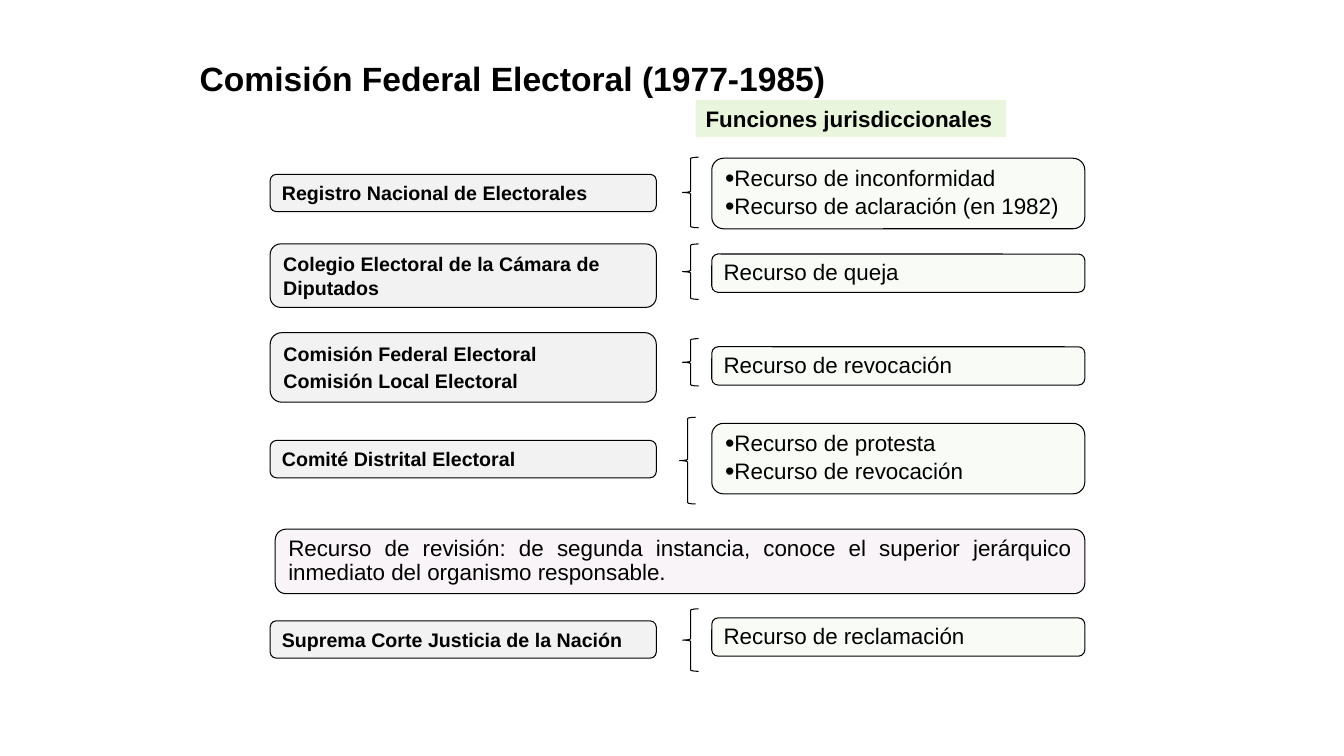
"""Build a slide pairing electoral bodies with their legal remedies."""
import pptx
import pptx.util
import pptx.dml.color
import pptx.enum.shapes
import pptx.enum.text
import pptx.oxml.ns
import lxml.etree
from dataclasses import dataclass

TITLE = "Comisión Federal Electoral (1977-1985)"
HEAD = "Funciones jurisdiccionales"
REVIEW = ("Recurso de revisión: de segunda instancia, conoce el superior "
          "jerárquico inmediato del organismo responsable.")

# Each part holds its lines, top and height; the brace holds left, top, height.
ROWS = [
    ((["Registro Nacional de Electorales"], 1.73, 0.37),
     (["Recurso de inconformidad", "Recurso de aclaración (en 1982)"], 1.57, 0.7),
     (6.77, 1.56, 0.7)),
    ((["Colegio Electoral de la Cámara de Diputados"], 2.42, 0.63),
     (["Recurso de queja"], 2.52, 0.38),
     (6.77, 2.42, 0.55)),
    ((["Comisión Federal Electoral", "Comisión Local Electoral"], 3.3, 0.69),
     (["Recurso de revocación"], 3.44, 0.38),
     (6.77, 3.36, 0.47)),
    ((["Comité Distrital Electoral"], 4.37, 0.37),
     (["Recurso de protesta", "Recurso de revocación"], 4.2, 0.7),
     (6.74, 4.14, 0.86)),
    ((["Suprema Corte Justicia de la Nación"], 6.16, 0.37),
     (["Recurso de reclamación"], 6.13, 0.38),
     (6.77, 6.04, 0.62)),
]
BODY_X, BODY_W = 2.68, 3.83
CASE_X, CASE_W = 7.06, 3.7
BRACE_W = 0.16
HANG = 0.09


@dataclass(frozen=True)
class Theme:
    """Colours, font and type sizes."""
    font: str = "Arial"
    ink: str = "000000"
    gray: str = "BFBFBF"
    green: str = "92D050"
    plum: str = "993366"
    title: int = 24
    case: int = 16
    body: int = 14
    lead: float = 16.8
    rule: float = 0.75


LOOK = Theme()
KIND = pptx.enum.shapes.MSO_SHAPE
ALIGN = pptx.enum.text.PP_ALIGN
ANCHOR = pptx.enum.text.MSO_ANCHOR
Pt = pptx.util.Pt


def color(code):
    """Turn a hex code into a colour."""
    return pptx.dml.color.RGBColor.from_string(code)


def add(parent, tag, **attrs):
    """Append a drawing element."""
    return lxml.etree.SubElement(parent, pptx.oxml.ns.qn(tag), **attrs)


def draw(slide, kind, box, fill=None, alpha=100, line=True):
    """Add a preset shape with a tinted fill and a thin line."""
    shape = slide.shapes.add_shape(kind, *map(pptx.util.Inches, box))
    shape.shadow.inherit = False
    if fill:
        shape.fill.solid()
        shape.fill.fore_color.rgb = color(fill)
        tint = shape.fill._xPr.find(".//" + pptx.oxml.ns.qn("a:srgbClr"))
        add(tint, "a:alpha", val=str(alpha * 1000))
    else:
        shape.fill.background()
    if line:
        shape.line.color.rgb = color(LOOK.ink)
        shape.line.width = Pt(LOOK.rule)
    else:
        shape.line.fill.background()
    return shape


def write(shape, lines, size, bold=False, align=ALIGN.LEFT,
          anchor=ANCHOR.MIDDLE, lead=None, wrap=True):
    """Fill a shape with formatted paragraphs."""
    frame = shape.text_frame
    frame.text = "\n".join(lines)
    frame.word_wrap = wrap
    frame.auto_size = pptx.enum.text.MSO_AUTO_SIZE.NONE
    frame.vertical_anchor = anchor
    for i, para in enumerate(frame.paragraphs):
        para.alignment = align
        para.space_before = Pt(0.2 * size if i else 0)
        if lead:
            para.line_spacing = Pt(lead)
        font = para.font
        font.name, font.size, font.bold = LOOK.font, Pt(size), bold
        font.color.rgb = color(LOOK.ink)


def hang(shape, dots):
    """Give paragraphs a hanging indent, with bullets on request."""
    step = pptx.util.Inches(HANG)
    for para in shape.text_frame.paragraphs:
        props = para._p.get_or_add_pPr()
        props.set("marL", str(step))
        props.set("indent", str(-step))
        if dots:
            marks = [lxml.etree.Element(pptx.oxml.ns.qn("a:" + tag))
                     for tag in ("buClr", "buSzPct", "buFont", "buChar")]
            add(marks[0], "a:srgbClr", val=LOOK.ink)
            marks[1].set("val", "120000")
            marks[2].set("typeface", LOOK.font)
            marks[3].set("char", "•")
            last = props.find(pptx.oxml.ns.qn("a:defRPr"))
            for mark in marks:
                last.addprevious(mark)


def main():
    """Compose and save the slide."""
    deck = pptx.Presentation()
    deck.slide_width = pptx.util.Inches(13.33)
    deck.slide_height = pptx.util.Inches(7.5)
    slide = deck.slides.add_slide(deck.slide_layouts[5])

    title = slide.shapes.title
    title.left, title.top, title.width, title.height = map(
        pptx.util.Inches, (1.88, 0.52, 9.78, 0.51))
    write(title, [TITLE], LOOK.title, bold=True, anchor=ANCHOR.TOP)

    head = draw(slide, KIND.RECTANGLE, (6.9, 0.99, 3.08, 0.37),
                LOOK.green, 20, line=False)
    write(head, [HEAD], LOOK.case, bold=True, align=ALIGN.JUSTIFY,
          anchor=ANCHOR.TOP, wrap=False)

    for (names, top, tall), (cases, y, high), (x, start, span) in ROWS:
        body = draw(slide, KIND.ROUNDED_RECTANGLE,
                    (BODY_X, top, BODY_W, tall), LOOK.gray, 20)
        write(body, names, LOOK.body, bold=True)
        case = draw(slide, KIND.ROUNDED_RECTANGLE,
                    (CASE_X, y, CASE_W, high), LOOK.green, 5)
        write(case, cases, LOOK.case, align=ALIGN.JUSTIFY, lead=LOOK.lead)
        hang(case, len(cases) > 1)
        draw(slide, KIND.LEFT_BRACE, (x, start, BRACE_W, span))

    review = draw(slide, KIND.ROUNDED_RECTANGLE,
                  (2.73, 5.25, 8.03, 0.64), LOOK.plum, 5)
    write(review, [REVIEW], LOOK.case, align=ALIGN.JUSTIFY, lead=LOOK.lead)
    deck.save("out.pptx")


if __name__ == "__main__":
    main()
